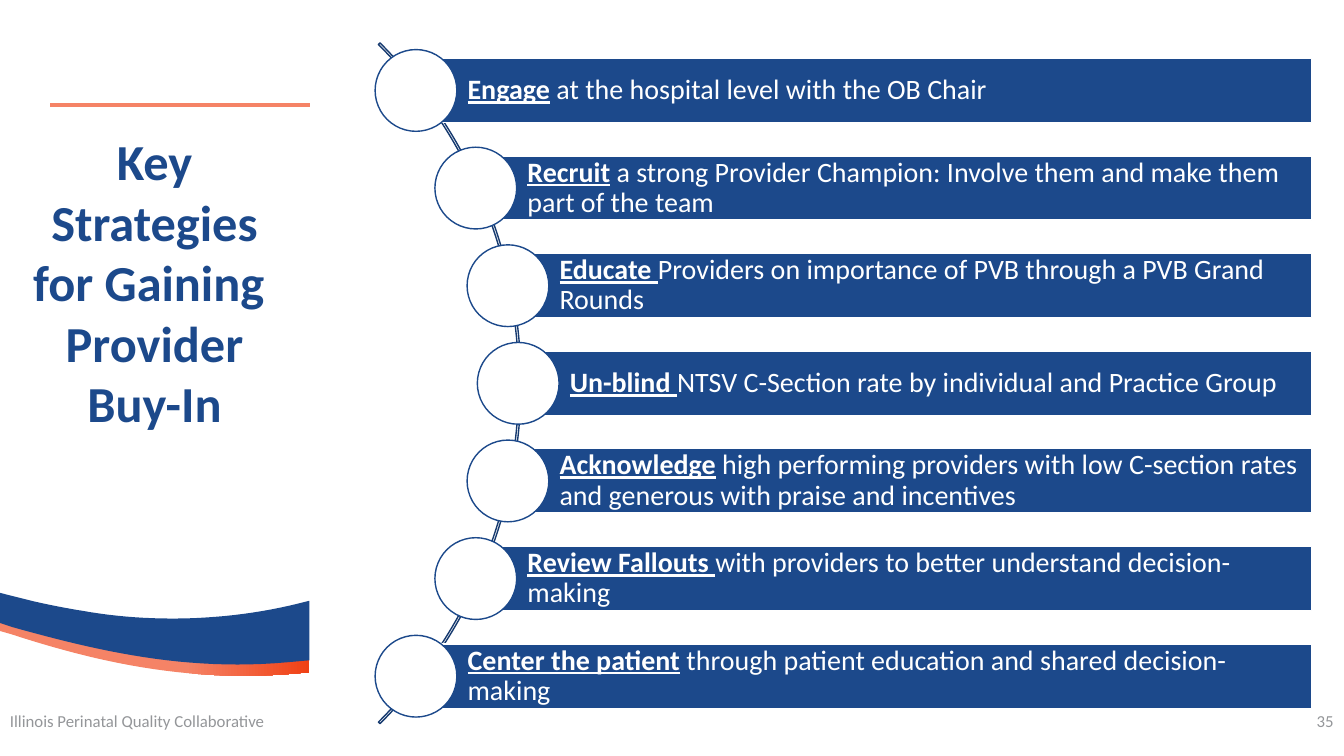
from dataclasses import dataclass
from math import sqrt

from lxml.etree import SubElement
from pptx import Presentation
from pptx.dml.color import RGBColor
from pptx.enum.shapes import MSO_CONNECTOR, MSO_SHAPE
from pptx.enum.text import MSO_ANCHOR, PP_ALIGN
from pptx.oxml.ns import qn
from pptx.util import Cm, Pt


@dataclass(frozen=True)
class Theme:
    font: str = "Calibri"
    blue: RGBColor = RGBColor(0x1C, 0x49, 0x8B)
    dark_blue: RGBColor = RGBColor(0x16, 0x3A, 0x6F)
    coral: RGBColor = RGBColor(0xF5, 0x83, 0x66)
    red: RGBColor = RGBColor(0xF0, 0x41, 0x15)
    gray: RGBColor = RGBColor(0x94, 0x96, 0x99)
    white: RGBColor = RGBColor(0xFF, 0xFF, 0xFF)
    title_size: Pt = Pt(36)
    strategy_size: Pt = Pt(20)
    footer_size: Pt = Pt(12)


THEME = Theme()

STRATEGIES = [
    ("Engage", " at the hospital level with the OB Chair"),
    ("Recruit", " a strong Provider Champion: Involve them and make them part of the team"),
    ("Educate ", "Providers on importance of PVB through a PVB Grand Rounds"),
    ("Un-blind ", "NTSV C-Section rate by individual and Practice Group"),
    ("Acknowledge", " high performing providers with low C-section rates "
                    "and generous with praise and incentives"),
    ("Review Fallouts ", "with providers to better understand decision-making"),
    ("Center the patient", " through patient education and shared decision-making"),
]

# All lengths below are centimetres.
PANEL_RIGHT = 7.8
MIDDLE_Y = 9.66
ROW_PITCH = 2.46
BAR_RIGHT, BAR_HEIGHT = 33.05, 1.62
CIRCLE_SIZE = 2.06
CIRCLE_PATH_CENTER_X, CIRCLE_PATH_RADIUS = 1.2, 11.86
ARC_CENTER_X, ARC_RADIUS = 1.0, 12.13

# Each segment is one point for a straight line or three for a Bézier curve.
CORAL_WAVE = [
    [(0, 15.37)], [(1.19, 15.72)],
    [(3.3, 16.28), (5.59, 16.46), (7.75, 16.03)],
    [(PANEL_RIGHT, 16)], [(PANEL_RIGHT, 16.94)], [(7.21, 16.99)],
    [(4.65, 17.17), (2.46, 16.69), (0.28, 15.98)], [(0, 15.9)],
]
BLUE_WAVE = [
    [(0, 14.94)], [(0.79, 15.14)],
    [(1.22, 15.24), (1.63, 15.32), (2.06, 15.39)],
    [(3.78, 15.7), (5.74, 15.65), (7.52, 15.21)],
    [(PANEL_RIGHT, 15.14)], [(PANEL_RIGHT, 16.64)], [(7.24, 16.69)],
    [(4.67, 16.92), (2.49, 16.41), (0.3, 15.8)], [(0, 15.7)],
]


def format_run(run, size, color, bold=False, underline=False):
    font = run.font
    font.name, font.size, font.bold = THEME.font, size, bold
    font.underline = underline
    font.color.rgb = color


def add_label(slide, text, box, size, color, align, bold=False):
    text_box = slide.shapes.add_textbox(*map(Cm, box))
    text_frame = text_box.text_frame
    text_frame.word_wrap = True
    text_frame.vertical_anchor = MSO_ANCHOR.MIDDLE
    text_frame.text = text
    paragraph = text_frame.paragraphs[0]
    paragraph.alignment = align
    for run in paragraph.runs:
        format_run(run, size, color, bold)


def add_outlined_shape(slide, kind, box, line_color, fill_color=None):
    shape = slide.shapes.add_shape(kind, *map(Cm, box))
    shape.shadow.inherit = False
    if fill_color is None:
        shape.fill.background()
    else:
        shape.fill.solid()
        shape.fill.fore_color.rgb = fill_color
    shape.line.color.rgb = line_color
    shape.line.width = Pt(1)
    return shape


def curve_points(start, segment, steps=24):
    """Return points along a cubic Bézier curve, without its start."""
    points = []
    for step in range(1, steps + 1):
        t = step / steps
        weights = ((1 - t) ** 3, 3 * t * (1 - t) ** 2, 3 * t ** 2 * (1 - t), t ** 3)
        points.append(tuple(
            sum(weight * point[axis] for weight, point in zip(weights, [start, *segment]))
            for axis in (0, 1)))
    return points


def add_wave(slide, segments):
    points = list(segments[0])
    for segment in segments[1:]:
        points += segment if len(segment) == 1 else curve_points(points[-1], segment)
    start, *others = [(Cm(x), Cm(y)) for x, y in points]
    builder = slide.shapes.build_freeform(*start)
    builder.add_line_segments(others, close=True)
    wave = builder.convert_to_shape()
    wave.shadow.inherit = False
    wave.line.fill.background()
    return wave


def add_side_panel(slide):
    rule = slide.shapes.add_connector(
        MSO_CONNECTOR.STRAIGHT, Cm(1.27), Cm(2.64), Cm(PANEL_RIGHT), Cm(2.64))
    rule.line.color.rgb = THEME.coral
    rule.line.width = Pt(2.5)
    SubElement(rule._element.spPr, qn("a:effectLst"))

    coral_fill = add_wave(slide, CORAL_WAVE).fill
    coral_fill.gradient()
    coral_fill.gradient_angle = 0
    stops = [(0.6, THEME.coral), (1, THEME.red)]
    for stop, (position, color) in zip(coral_fill.gradient_stops, stops):
        stop.position = position
        stop.color.rgb = color

    blue_fill = add_wave(slide, BLUE_WAVE).fill
    blue_fill.solid()
    blue_fill.fore_color.rgb = THEME.blue

    add_label(slide, "Key Strategies for Gaining \vProvider Buy-In", (0.3, 5.26, 7.19, 3.68),
              THEME.title_size, THEME.blue, PP_ALIGN.CENTER, bold=True)


def add_arc(slide):
    box = (ARC_CENTER_X - ARC_RADIUS, MIDDLE_Y - ARC_RADIUS, 2 * ARC_RADIUS, 2 * ARC_RADIUS)
    arc = add_outlined_shape(slide, MSO_SHAPE.BLOCK_ARC, box, THEME.dark_blue)
    for index, value in enumerate((189, 27, 0.0023)):
        arc.adjustments[index] = value


def add_strategy(slide, offset, keyword, detail):
    """Add a bar and its circle, offset vertically from the middle of the arc."""
    center_x = CIRCLE_PATH_CENTER_X + sqrt(CIRCLE_PATH_RADIUS ** 2 - offset ** 2)
    center_y = MIDDLE_Y + offset
    bar = add_outlined_shape(
        slide, MSO_SHAPE.RECTANGLE,
        (center_x, center_y - BAR_HEIGHT / 2, BAR_RIGHT - center_x, BAR_HEIGHT),
        THEME.white, THEME.blue)
    text_frame = bar.text_frame
    text_frame.word_wrap = True
    text_frame.vertical_anchor = MSO_ANCHOR.MIDDLE
    text_frame.margin_left = Cm(1.3)
    text_frame.margin_top = text_frame.margin_right = text_frame.margin_bottom = Cm(0.15)
    paragraph = text_frame.paragraphs[0]
    paragraph.alignment = PP_ALIGN.LEFT
    paragraph.line_spacing = 0.9
    for text, emphasized in ((keyword, True), (detail, False)):
        run = paragraph.add_run()
        run.text = text
        format_run(run, THEME.strategy_size, THEME.white, emphasized, emphasized)

    add_outlined_shape(
        slide, MSO_SHAPE.OVAL,
        (center_x - CIRCLE_SIZE / 2, center_y - CIRCLE_SIZE / 2, CIRCLE_SIZE, CIRCLE_SIZE),
        THEME.blue, THEME.white)


def main():
    presentation = Presentation()
    presentation.slide_width, presentation.slide_height = Cm(33.87), Cm(19.05)
    slide = presentation.slides.add_slide(presentation.slide_layouts[6])

    add_side_panel(slide)
    add_label(slide, "35", (26.24, 17.65, 7.62, 1.02),
              THEME.footer_size, THEME.gray, PP_ALIGN.RIGHT)
    add_label(slide, "Illinois Perinatal Quality Collaborative", (0, 17.65, 11.43, 1.02),
              THEME.footer_size, THEME.gray, PP_ALIGN.LEFT)
    add_arc(slide)
    middle_index = len(STRATEGIES) // 2
    for index, (keyword, detail) in enumerate(STRATEGIES):
        add_strategy(slide, (index - middle_index) * ROW_PITCH, keyword, detail)

    presentation.save("out.pptx")


if __name__ == "__main__":
    main()
